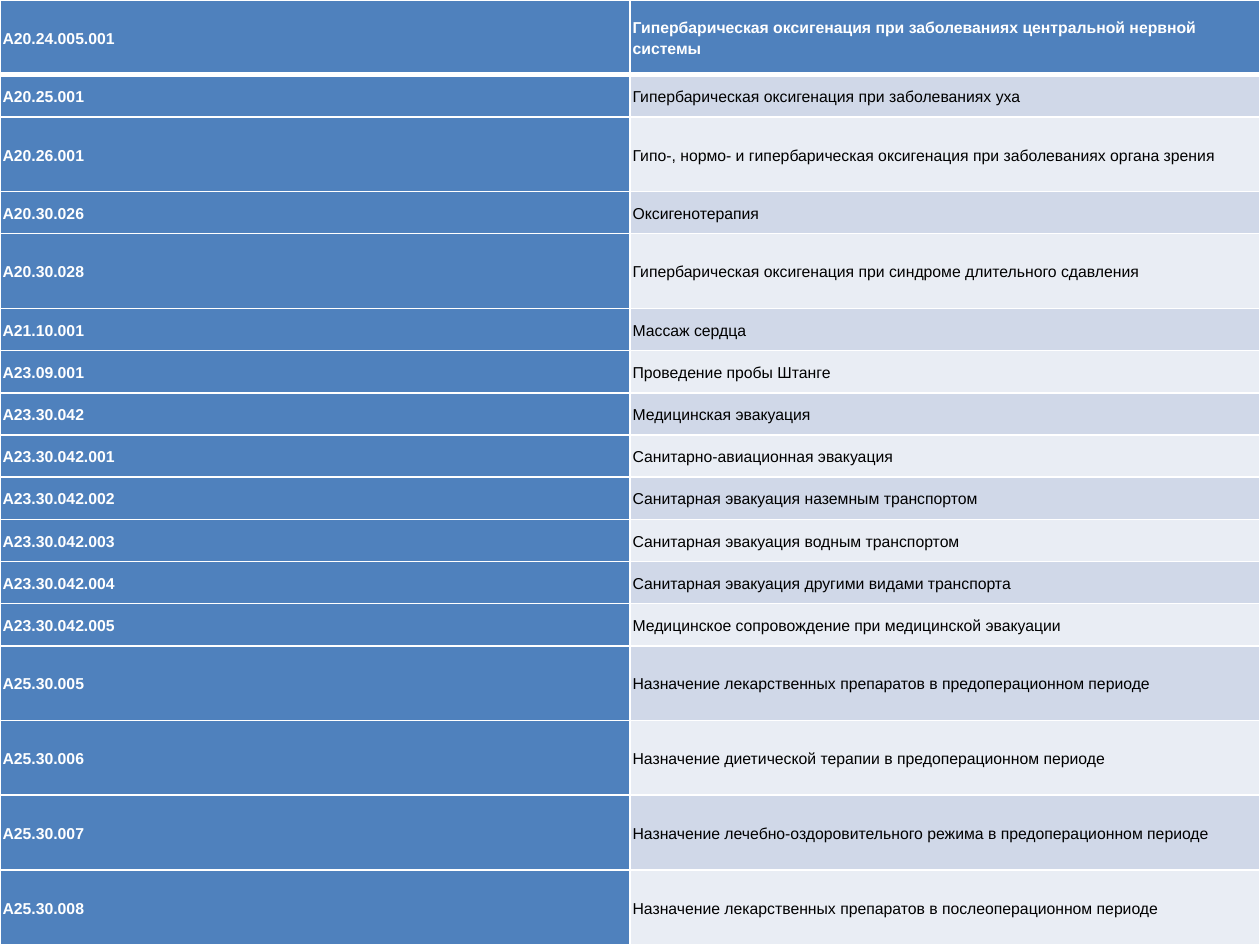
import pptx
import pptx.dml.color
import pptx.enum.text
import pptx.oxml.ns
import pptx.util
from lxml import etree

Pt = pptx.util.Pt

SLIDE_WIDTH, SLIDE_HEIGHT = 720, 540
SHORT, TALL = 24.1, 42.7
CELL_MARGIN = 1.5
BLUE, WHITE, BLACK = "4F81BD", "FFFFFF", "000000"
BANDS = ["E9EDF4", "D0D8E8"]

SERVICES = [
    ("A20.24.005.001", "Гипербарическая оксигенация при заболеваниях центральной нервной системы", TALL),
    ("A20.25.001", "Гипербарическая оксигенация при заболеваниях уха", SHORT),
    ("A20.26.001", "Гипо-, нормо- и гипербарическая оксигенация при заболеваниях органа зрения", TALL),
    ("A20.30.026", "Оксигенотерапия", SHORT),
    ("A20.30.028", "Гипербарическая оксигенация при синдроме длительного сдавления", TALL),
    ("A21.10.001", "Массаж сердца", SHORT),
    ("A23.09.001", "Проведение пробы Штанге", SHORT),
    ("A23.30.042", "Медицинская эвакуация", SHORT),
    ("A23.30.042.001", "Санитарно-авиационная эвакуация", SHORT),
    ("A23.30.042.002", "Санитарная эвакуация наземным транспортом", SHORT),
    ("A23.30.042.003", "Санитарная эвакуация водным транспортом", SHORT),
    ("A23.30.042.004", "Санитарная эвакуация другими видами транспорта", SHORT),
    ("A23.30.042.005", "Медицинское сопровождение при медицинской эвакуации", SHORT),
    ("A25.30.005", "Назначение лекарственных препаратов в предоперационном периоде", TALL),
    ("A25.30.006", "Назначение диетической терапии в предоперационном периоде", TALL),
    ("A25.30.007", "Назначение лечебно-оздоровительного режима в предоперационном периоде", TALL),
    ("A25.30.008", "Назначение лекарственных препаратов в послеоперационном периоде", TALL),
]


def color(value):
    return pptx.dml.color.RGBColor.from_string(value)


def write_text(frame, text, size=9, font="Arial", fill=BLACK, bold=False):
    para = frame.paragraphs[0]
    para.line_spacing = 1.15
    para.space_after = Pt(10)
    span = para.add_run()
    span.text = text
    span.font.size = Pt(size)
    span.font.name = font
    span.font.bold = bold
    span.font.color.rgb = color(fill)


def set_borders(cell, top=1, bottom=1):
    """Draw white borders; must run before the fill, which follows them in the XML."""
    properties = cell._tc.get_or_add_tcPr()
    qn = pptx.oxml.ns.qn
    for side, width in (("L", 1), ("R", 1), ("T", top), ("B", bottom)):
        line = etree.SubElement(properties, qn(f"a:ln{side}"), w=str(Pt(width)))
        solid = etree.SubElement(line, qn("a:solidFill"))
        etree.SubElement(solid, qn("a:srgbClr"), val=WHITE)


def format_cell(cell, fill):
    cell.fill.solid()
    cell.fill.fore_color.rgb = color(fill)
    cell.vertical_anchor = pptx.enum.text.MSO_ANCHOR.MIDDLE
    cell.margin_left = cell.margin_right = Pt(CELL_MARGIN)
    cell.margin_top = cell.margin_bottom = Pt(CELL_MARGIN)


def add_service_table(slide):
    table = slide.shapes.add_table(
        len(SERVICES), 2, Pt(0), Pt(0), Pt(SLIDE_WIDTH), Pt(SLIDE_HEIGHT)
    ).table
    table.first_col = True
    for column in table.columns:
        column.width = Pt(SLIDE_WIDTH / 2)
    for index, (code, service, height) in enumerate(SERVICES):
        table.rows[index].height = Pt(height)
        for column, text in enumerate((code, service)):
            cell = table.cell(index, column)
            is_heading = index == 0 or column == 0
            set_borders(cell, top=3 if index == 1 else 1, bottom=3 if index == 0 else 1)
            format_cell(cell, BLUE if is_heading else BANDS[index % 2])
            write_text(cell.text_frame, text, fill=WHITE if is_heading else BLACK, bold=is_heading)


def main():
    deck = pptx.Presentation()
    deck.slide_width = Pt(SLIDE_WIDTH)
    deck.slide_height = Pt(SLIDE_HEIGHT)
    page = deck.slides.add_slide(deck.slide_layouts[6])
    add_service_table(page)
    deck.save("out.pptx")


if __name__ == "__main__":
    main()
